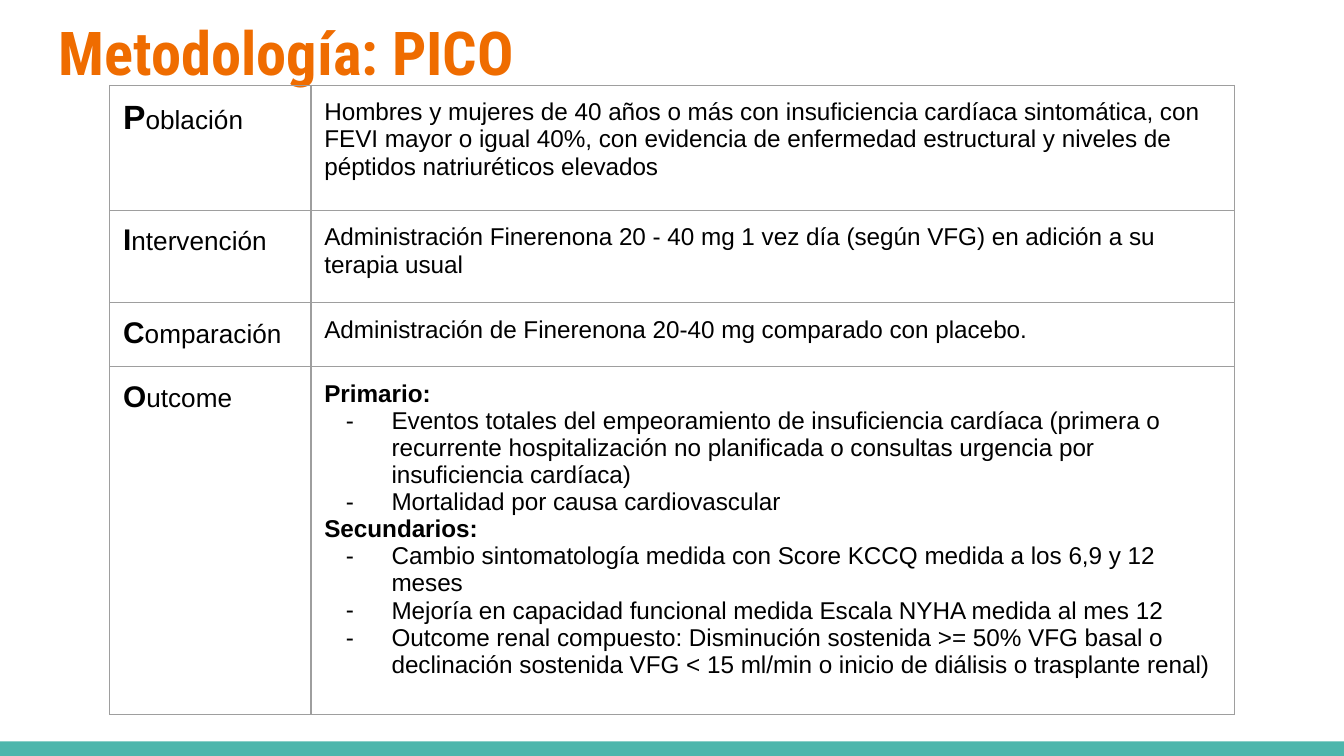
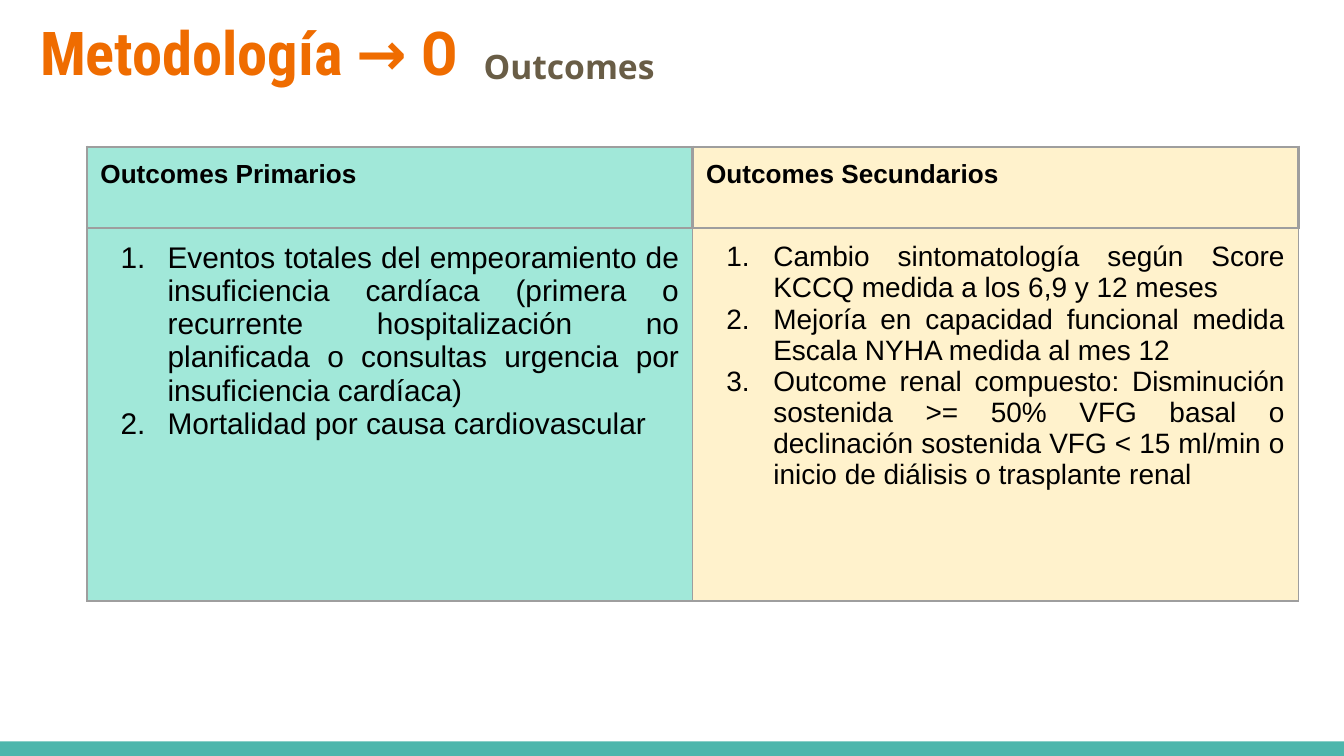
import pptx
import pptx.dml.color
import pptx.enum.shapes
import pptx.enum.text
import pptx.oxml.ns
import pptx.util
from lxml import etree

Pt = pptx.util.Pt
RGB = pptx.dml.color.RGBColor
ALIGN = pptx.enum.text.PP_ALIGN
ANCHOR = pptx.enum.text.MSO_ANCHOR
qn = pptx.oxml.ns.qn

ORANGE = RGB(0xEF, 0x6C, 0x00)
TEAL = RGB(0x4D, 0xB6, 0xAC)
BROWN = RGB(0x69, 0x5D, 0x46)
GREY = RGB(0x9E, 0x9E, 0x9E)
MINT = RGB(0xA1, 0xE8, 0xD9)
CREAM = RGB(0xFF, 0xF2, 0xCC)
BLACK = RGB(0, 0, 0)

WIDTH, HEIGHT, BAND = 720, 405, 7.8
INSET = 7.2
MARGINS = {f"margin_{side}": Pt(INSET) for side in ("left", "top", "right", "bottom")}


def apply(target, values):
    for name, value in values.items():
        setattr(target, name, value)


def para(text, size, bold=False, **form):
    return {"runs": [(text, size, bold)], **form}


def initial(letter, rest, size=16):
    return [{"runs": [(letter, size, True), (rest, 14, False)]}]


def dashes(*texts):
    return [para(text, 13, bullet="-", hang=24.5) for text in texts]


def numbered(size, *texts):
    return [para(text, size, bullet="1.", hang=25.2, align=ALIGN.JUSTIFY) for text in texts]


class Deck:
    """Style of the presentation and the slide being filled."""

    def __init__(self):
        self.prs = pptx.Presentation()
        apply(self.prs, {"slide_width": Pt(WIDTH), "slide_height": Pt(HEIGHT)})
        self.s = None

    def slide(self, title, left):
        self.s = self.prs.slides.add_slide(self.prs.slide_layouts[6])
        self.band()
        self.text(title, (left, 0, 671, 55.4), 32.4, "Roboto Condensed", ORANGE, ANCHOR.MIDDLE)

    def band(self):
        sp = self.s.shapes.add_shape(
            pptx.enum.shapes.MSO_SHAPE.RECTANGLE,
            Pt(0), Pt(HEIGHT - BAND), Pt(WIDTH), Pt(BAND))
        sp.shadow.inherit = False
        sp.fill.solid()
        sp.fill.fore_color.rgb = TEAL
        sp.line.fill.background()

    def text(self, text, box, size, font, color, anchor=ANCHOR.TOP, **form):
        tf = self.s.shapes.add_textbox(*map(Pt, box)).text_frame
        apply(tf, {**MARGINS, "word_wrap": True, "vertical_anchor": anchor})
        apply(tf.paragraphs[0], form)
        self.run(tf.paragraphs[0], text, size, True, font, color)

    def run(self, p, text, size, bold, font="Arial", color=BLACK):
        r = p.add_run()
        r.text = text
        apply(r.font, {"name": font, "size": Pt(size), "bold": bold})
        r.font.color.rgb = color

    def bullet(self, p, mark, hang):
        pPr = p._p.get_or_add_pPr()
        pPr.set("marL", str(Pt(36)))
        pPr.set("indent", str(-Pt(hang)))
        clr = etree.SubElement(pPr, qn("a:buClr"))
        etree.SubElement(clr, qn("a:srgbClr"), val=str(BLACK))
        etree.SubElement(pPr, qn("a:buFont"), typeface="Arial")
        if mark == "1.":
            etree.SubElement(pPr, qn("a:buAutoNum"), type="arabicPeriod")
        else:
            etree.SubElement(pPr, qn("a:buChar"), char=mark)

    def borders(self, cell, widths):
        tcPr = cell._tc.get_or_add_tcPr()
        for side, width in zip("LRTB", widths):
            ln = etree.SubElement(tcPr, qn(f"a:ln{side}"), w=str(Pt(width)))
            fill = etree.SubElement(ln, qn("a:solidFill"))
            etree.SubElement(fill, qn("a:srgbClr"), val=str(GREY))

    def cell(self, cell, paragraphs, fill, widths):
        apply(cell, {**MARGINS, "vertical_anchor": ANCHOR.TOP})
        self.borders(cell, widths)
        if fill is None:
            cell.fill.background()
        else:
            cell.fill.solid()
            cell.fill.fore_color.rgb = fill
        tf = cell.text_frame
        for i, item in enumerate(paragraphs):
            p = tf.add_paragraph() if i else tf.paragraphs[0]
            p.alignment = item.get("align", ALIGN.LEFT)
            if "bullet" in item:
                self.bullet(p, item["bullet"], item["hang"])
            for run in item["runs"]:
                self.run(p, *run)

    def table(self, left, top, cols, rows, content, fills, widths):
        tbl = self.s.shapes.add_table(
            len(rows), len(cols), Pt(left), Pt(top), Pt(sum(cols)), Pt(sum(rows))).table
        apply(tbl, {"first_row": False, "horz_banding": False})
        for col, width in zip(tbl.columns, cols):
            col.width = Pt(width)
        for row, height, items, lines in zip(tbl.rows, rows, content, widths):
            row.height = Pt(height)
            for cell, item, fill in zip(row.cells, items, fills):
                self.cell(cell, item, fill, lines)


def pico(deck):
    deck.slide("Metodología: PICO", 24.5)
    outcomes = [
        para("Primario:", 13, True),
        *dashes(
            "Eventos totales del empeoramiento de insuficiencia cardíaca (primera o "
            "recurrente hospitalización no planificada o consultas urgencia por "
            "insuficiencia cardíaca)",
            "Mortalidad por causa cardiovascular"),
        para("Secundarios:", 13, True),
        *dashes(
            "Cambio sintomatología medida con Score KCCQ medida a los 6,9 y 12 meses",
            "Mejoría en capacidad funcional medida Escala NYHA medida al mes 12",
            "Outcome renal compuesto: Disminución sostenida >= 50% VFG basal o "
            "declinación sostenida VFG < 15 ml/min o inicio de diálisis o "
            "trasplante renal)"),
    ]
    content = [
        (initial("P", "oblación", 18), [para(
            "Hombres y mujeres de 40 años o más con insuficiencia cardíaca sintomática, "
            "con FEVI mayor o igual 40%, con evidencia de enfermedad estructural y "
            "niveles de péptidos natriuréticos elevados", 13)]),
        (initial("I", "ntervención"), [para(
            "Administración Finerenona 20 - 40 mg 1 vez día (según VFG) en adición a su "
            "terapia usual", 13)]),
        (initial("C", "omparación"), [para(
            "Administración de Finerenona 20-40 mg comparado con placebo.", 13)]),
        (initial("O", "utcome"), outcomes),
    ]
    deck.table(58.8, 45.8, (107.8, 494.6), (67, 49.4, 34.4, 170.6), content,
               (None, None), [(0.75,) * 4] * 4)


def outcome_lists(deck):
    deck.slide("Metodología → O", 14.4)
    deck.text("Outcomes", (252, 14.4, 156, 41), 18, "Open Sans", BROWN,
              line_spacing=1.15, space_after=Pt(12))
    content = [
        ([para("Outcomes Primarios", 14, True)], [para("Outcomes Secundarios", 14, True)]),
        (numbered(
            16,
            "Eventos totales del empeoramiento de insuficiencia cardíaca (primera o "
            "recurrente hospitalización no planificada o consultas urgencia por "
            "insuficiencia cardíaca)",
            "Mortalidad por causa cardiovascular"),
         numbered(
            15,
            "Cambio sintomatología según Score KCCQ medida a los 6,9 y 12 meses",
            "Mejoría en capacidad funcional medida Escala NYHA medida al mes 12",
            "Outcome renal compuesto: Disminución sostenida >= 50% VFG basal o "
            "declinación sostenida VFG < 15 ml/min o inicio de diálisis o "
            "trasplante renal")),
    ]
    deck.table(46.6, 78.6, (324.5, 324.5), (43.6, 199.8), content,
               (MINT, CREAM), [(1.5,) * 4, (0.75, 0.75, 1.5, 0.75)])


def main():
    deck = Deck()
    pico(deck)
    outcome_lists(deck)
    deck.prs.save("out.pptx")


if __name__ == "__main__":
    main()
